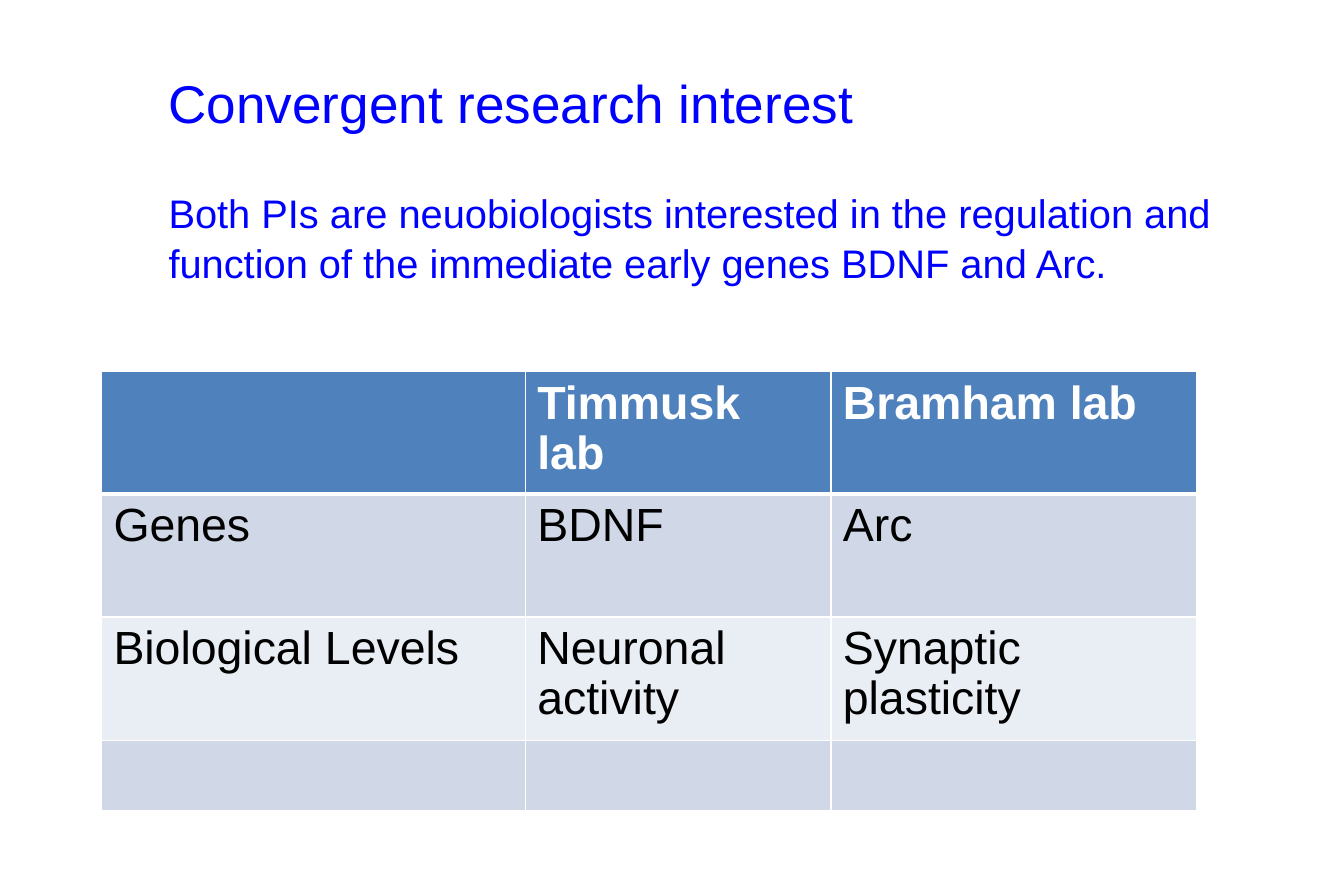
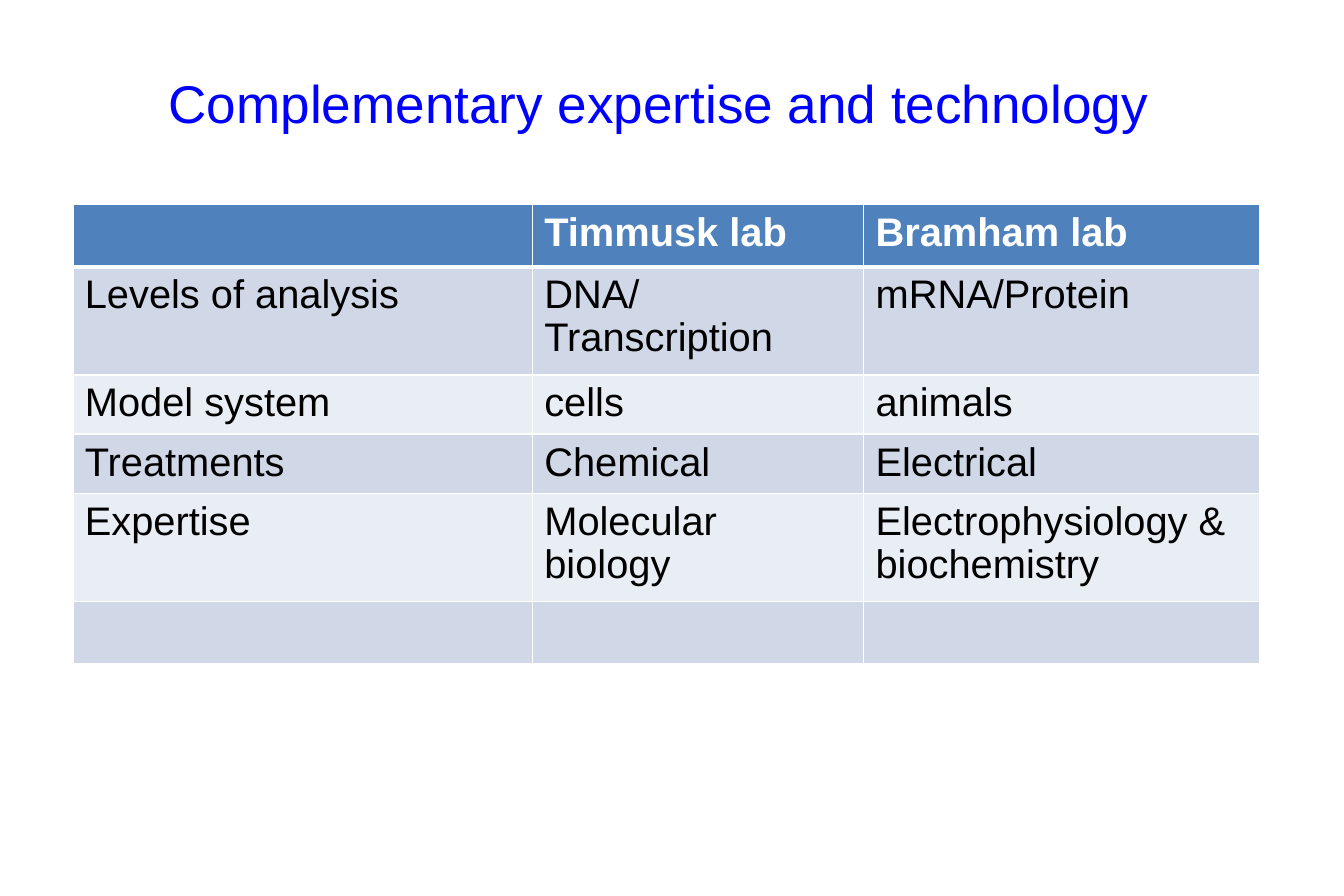
from lxml import etree
from pptx import Presentation
from pptx.dml.color import RGBColor
from pptx.enum import text
from pptx.oxml.ns import qn
from pptx.util import Cm, Pt

# Content
LABS = ("", "Timmusk lab", "Bramham lab")
SLIDES = [
    {
        "title": "Convergent research interest",
        "body": "Both PIs are neuobiologists interested in the regulation and "
                "function of the immediate early genes BDNF and Arc.",
        "left": 2.16, "top": 7.9, "width": 23.29, "size": 28,
        "heights": (2.6, 2.62, 2.62, 1.43),
        "rows": [
            LABS,
            ("Genes", "BDNF", "Arc"),
            ("Biological Levels", "Neuronal activity", "Synaptic plasticity"),
            ("", "", ""),
        ],
    },
    {
        "title": "Complementary expertise and technology",
        "body": None,
        "left": 1.55, "top": 4.34, "width": 25.25, "size": 24,
        "heights": (1.26, 2.3, 1.26, 1.26, 2.3, 1.26),
        "rows": [
            LABS,
            ("Levels of analysis", "DNA/Transcription", "mRNA/Protein"),
            ("Model system", "cells", "animals"),
            ("Treatments", "Chemical", "Electrical"),
            ("Expertise", "Molecular biology", "Electrophysiology & biochemistry"),
            ("", "", ""),
        ],
    },
]

# Shared style
COLORS = {"heading": "0000FF", "header": "4F81BD", "odd": "D0D8E8",
          "even": "E9EDF4", "white": "FFFFFF", "black": "000000"}
FONT = "Arial"
COLUMN_SHARES = (0.387, 0.279, 0.334)
TEXT_LEFT, TEXT_WIDTH = Cm(3.33), Cm(23.16)
TITLE_TOP, TITLE_HEIGHT = Cm(1.38), Cm(1.6)
BODY_TOP, BODY_HEIGHT = Cm(3.84), Cm(2.5)
LAYOUT_CONTENT, LAYOUT_TITLE_ONLY = 1, 5


def write(frame, words, size, color, bold=False, spacing=1.0):
    """Fill a text frame with one left-aligned paragraph."""
    frame.word_wrap = True
    paragraph = frame.paragraphs[0]
    paragraph.alignment = text.PP_ALIGN.LEFT
    paragraph.line_spacing = spacing
    paragraph.space_before = Pt(0)
    paragraph.font.size = Pt(size)
    if words:
        run = paragraph.add_run()
        run.text = words
        run.font.name, run.font.size, run.font.bold = FONT, Pt(size), bold
        run.font.color.rgb = RGBColor.from_string(COLORS[color])
    return paragraph


def write_placeholder(shape, words, top, height, **style):
    shape.left, shape.top, shape.width, shape.height = TEXT_LEFT, top, TEXT_WIDTH, height
    frame = shape.text_frame
    frame.auto_size = text.MSO_AUTO_SIZE.NONE
    frame.vertical_anchor = text.MSO_ANCHOR.TOP
    return write(frame, words, color="heading", **style)


def remove_bullet(paragraph):
    properties = paragraph._p.get_or_add_pPr()
    properties.set("marL", "0")
    properties.set("indent", "0")
    etree.SubElement(properties, qn("a:buNone"))


def set_borders(cell, **widths):
    """Draw white borders; widths in points, keyed by side L, R, T, B."""
    properties = cell._tc.get_or_add_tcPr()
    for side in "LRTB":
        line = etree.SubElement(properties, qn(f"a:ln{side}"), w=str(Pt(widths.get(side, 1))))
        fill = etree.SubElement(line, qn("a:solidFill"))
        etree.SubElement(fill, qn("a:srgbClr"), val=COLORS["white"])


def add_lab_table(slide, content):
    rows, width = content["rows"], content["width"]
    table = slide.shapes.add_table(
        len(rows), len(COLUMN_SHARES), Cm(content["left"]), Cm(content["top"]),
        Cm(width), Cm(sum(content["heights"]))).table
    for column, share in zip(table.columns, COLUMN_SHARES):
        column.width = Cm(width * share)
    for index, (row, height, entries) in enumerate(zip(table.rows, content["heights"], rows)):
        row.height = Cm(height)
        is_header = index == 0
        fill = "header" if is_header else "odd" if index % 2 else "even"
        for cell, words in zip(row.cells, entries):
            set_borders(cell, B=3 if is_header else 1, T=3 if index == 1 else 1)
            cell.fill.solid()
            cell.fill.fore_color.rgb = RGBColor.from_string(COLORS[fill])
            cell.margin_top = Cm(0.17)
            write(cell.text_frame, words, content["size"],
                  "white" if is_header else "black", bold=is_header, spacing=0.96)


def main():
    presentation = Presentation()
    presentation.slide_width, presentation.slide_height = Cm(28.58), Cm(19.05)
    for content in SLIDES:
        layout = LAYOUT_CONTENT if content["body"] else LAYOUT_TITLE_ONLY
        slide = presentation.slides.add_slide(presentation.slide_layouts[layout])
        write_placeholder(slide.shapes.title, content["title"], TITLE_TOP, TITLE_HEIGHT, size=32)
        if content["body"]:
            remove_bullet(write_placeholder(slide.placeholders[1], content["body"],
                                            BODY_TOP, BODY_HEIGHT, size=24, spacing=1.05))
        add_lab_table(slide, content)
    presentation.save("out.pptx")


if __name__ == "__main__":
    main()
